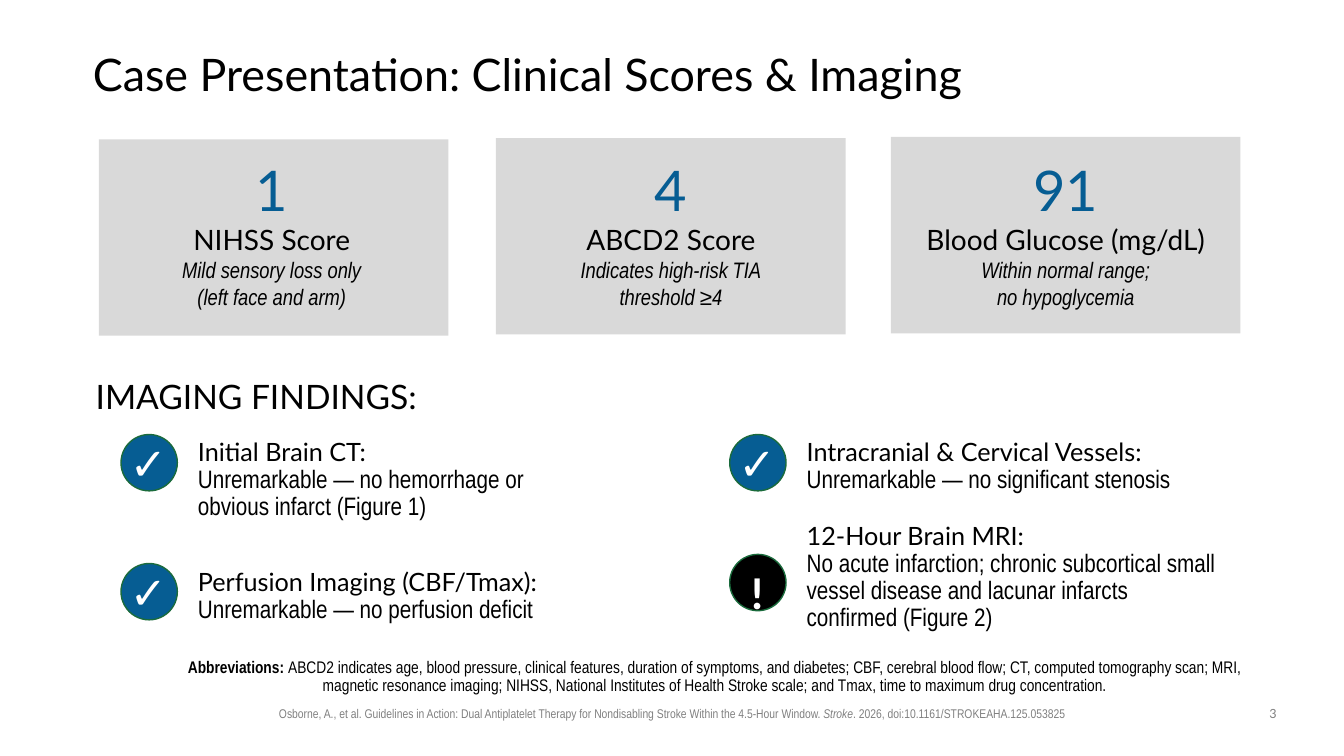
from collections import namedtuple

from pptx import Presentation
from pptx.dml.color import RGBColor
from pptx.enum import shapes, text
from pptx.util import Cm, Pt

BLACK = RGBColor(0x00, 0x00, 0x00)
WHITE = RGBColor(0xFF, 0xFF, 0xFF)
BLUE = RGBColor(0x06, 0x5D, 0x93)
GREEN = RGBColor(0x1A, 0x6B, 0x3C)
CARD_GREY = RGBColor(0xD9, 0xD9, 0xD9)
FOOTER_GREY = RGBColor(0x80, 0x80, 0x80)

Style = namedtuple("Style", "font size color bold italic", defaults=(BLACK, None, None))
TITLE = Style("Lato", 32)
SCORE = Style("Lato", 40, BLUE)
SCORE_NAME = Style("Lato", 20)
SCORE_NOTE = Style("Arial Narrow", 16, italic=True)
SECTION = Style("Lato", 24)
FINDING_NAME = Style("Lato", 18)
FINDING = Style("Arial Narrow", 18)
MARK = Style("Calibri", 32, WHITE, bold=True)
ABBREVIATION = Style("Arial Narrow", 12)
CITATION = Style("Arial Narrow", 9, FOOTER_GREY)
PAGE_NUMBER = Style("Lato", 9, FOOTER_GREY)

HEADING = "Case Presentation: Clinical Scores & Imaging"
# card left, card top, text left, text width, score, name, note lines
SCORES = [
    (2.49, 3.51, 2.67, 8.36, "1", "NIHSS Score",
     ["Mild sensory loss only", "(left face and arm)"]),
    (12.5, 3.48, 12.73, 8.36, "4", "ABCD2 Score",
     ["Indicates high-risk TIA", "threshold ≥4"]),
    (22.45, 3.45, 22.53, 8.66, "91", "Blood Glucose (mg/dL)",
     ["Within normal range;", "no hypoglycemia"]),
]
LEFT_COLUMN, RIGHT_COLUMN = 3.05, 18.39
TOP_ROW, BOTTOM_ROW = 10.95, 14.2
# column, mark top, badge top, text top, text width, text height, mark, fill, name, finding
FINDINGS = [
    (LEFT_COLUMN, TOP_ROW, TOP_ROW, TOP_ROW, 10.52, 2.34, "✓", BLUE,
     "Initial Brain CT:",
     "Unremarkable — no hemorrhage or obvious infarct (Figure 1)"),
    (RIGHT_COLUMN, TOP_ROW, TOP_ROW, TOP_ROW, 10.52, 1.65, "✓", BLUE,
     "Intracranial & Cervical Vessels:",
     "Unremarkable — no significant stenosis"),
    (LEFT_COLUMN, BOTTOM_ROW, BOTTOM_ROW, 14.22, 10.82, 1.65, "✓", BLUE,
     "Perfusion Imaging (CBF/Tmax):",
     "Unremarkable — no perfusion deficit"),
    (RIGHT_COLUMN, BOTTOM_ROW, 13.97, 13.06, 10.82, 3.02, "!", BLACK,
     "12-Hour Brain MRI:",
     "No acute infarction; chronic subcortical small vessel disease and "
     "lacunar infarcts confirmed (Figure 2)"),
]
ABBREVIATIONS = [
    "Abbreviations: ",
    "ABCD2 indicates age, blood pressure, clinical features, duration of symptoms, "
    "and diabetes; CBF, cerebral blood flow; CT, computed tomography scan; MRI, "
    "magnetic resonance imaging; NIHSS, National Institutes of Health Stroke scale; "
    "and Tmax, time to maximum drug concentration.",
]
SOURCE = [
    "Osborne, A., et al. Guidelines in Action: Dual Antiplatelet Therapy for "
    "Nondisabling Stroke Within the 4.5-Hour Window. ",
    "Stroke",
    ". 2026, doi:10.1161/STROKEAHA.125.053825",
]
CARD_WIDTH, CARD_HEIGHT = 8.81, 4.95
BADGE_SIZE = 1.42
BADGE_TO_TEXT = 1.69

CENTER, LEFT = text.PP_ALIGN.CENTER, text.PP_ALIGN.LEFT
TOP, MIDDLE, BOTTOM = (text.MSO_ANCHOR.TOP, text.MSO_ANCHOR.MIDDLE,
                       text.MSO_ANCHOR.BOTTOM)
DEFAULT_INSETS = (0.25, 0.13, 0.25, 0.13)
FLUSH_LEFT = (0, 0.13, 0.25, 0.13)
NO_INSETS = (0, 0, 0, 0)


def write(box, lines, align=LEFT, anchor=TOP, insets=DEFAULT_INSETS, spacing=None):
    """Fill a box with lines of (style, run, run, ...), one paragraph each."""
    frame = box.text_frame
    frame.word_wrap = True
    frame.auto_size = text.MSO_AUTO_SIZE.NONE
    frame.vertical_anchor = anchor
    (frame.margin_left, frame.margin_top,
     frame.margin_right, frame.margin_bottom) = map(Cm, insets)
    for index, (style, *runs) in enumerate(lines):
        para = frame.add_paragraph() if index else frame.paragraphs[0]
        para.alignment = align
        para.line_spacing = spacing
        para.font.name = style.font
        para.font.size = Pt(style.size)
        para.font.color.rgb = style.color
        para.font.bold = style.bold
        para.font.italic = style.italic
        for words in runs:
            para.add_run().text = words
    return frame.paragraphs[0]


def add_text(page, area, lines, **layout):
    return write(page.shapes.add_textbox(*map(Cm, area)), lines, **layout)


def add_filled(page, kind, area, fill, line=None):
    shape = page.shapes.add_shape(kind, *map(Cm, area))
    shape.shadow.inherit = False
    shape.fill.solid()
    shape.fill.fore_color.rgb = fill
    if line is None:
        shape.line.fill.background()
    else:
        shape.line.color.rgb = line
        shape.line.width = Pt(1)


def add_scores(page):
    for left, top, *_ in SCORES:
        add_filled(page, shapes.MSO_SHAPE.RECTANGLE,
                   (left, top, CARD_WIDTH, CARD_HEIGHT), CARD_GREY)
    for _, _, left, width, score, name, notes in SCORES:
        lines = [(SCORE, score), (SCORE_NAME, name)]
        lines += [(SCORE_NOTE, note) for note in notes]
        add_text(page, (left, 3.78, width, 4.19), lines, align=CENTER)


def add_findings(page):
    add_text(page, (2.41, 9.35, 15.11, 1.27), [(SECTION, "IMAGING FINDINGS:")],
             insets=FLUSH_LEFT)
    for (left, mark_top, badge_top, text_top, width, height,
         mark, fill, name, finding) in FINDINGS:
        add_filled(page, shapes.MSO_SHAPE.OVAL,
                   (left, badge_top, BADGE_SIZE, BADGE_SIZE), fill, GREEN)
        add_text(page, (left - 0.02, mark_top, BADGE_SIZE, BADGE_SIZE),
                 [(MARK, mark)], align=CENTER, anchor=MIDDLE, insets=NO_INSETS)
        add_text(page, (left + BADGE_TO_TEXT, text_top, width, height),
                 [(FINDING_NAME, name), (FINDING, finding)], spacing=0.9)


def add_footer(page):
    para = add_text(page, (4.24, 16.71, 27.81, 0.94),
                    [(ABBREVIATION, *ABBREVIATIONS)], align=CENTER, anchor=BOTTOM,
                    insets=FLUSH_LEFT, spacing=0.9)
    para.runs[0].font.bold = True
    para = add_text(page, (5.99, 17.65, 21.89, 0.64), [(CITATION, *SOURCE)],
                    align=CENTER)
    para.runs[1].font.italic = True
    add_text(page, (31.55, 17.65, 1.07, 0.66), [(PAGE_NUMBER, "3")], align=CENTER)


def main():
    deck = Presentation()
    deck.slide_width, deck.slide_height = Cm(33.87), Cm(19.05)
    page = deck.slides.add_slide(deck.slide_layouts[5])
    title = page.shapes.title
    title.left, title.top, title.width, title.height = map(Cm, (2.34, 1.02, 29.21, 1.83))
    write(title, [(TITLE, HEADING)], anchor=MIDDLE, insets=NO_INSETS, spacing=0.9)
    add_scores(page)
    add_findings(page)
    add_footer(page)
    deck.save("out.pptx")


if __name__ == "__main__":
    main()
